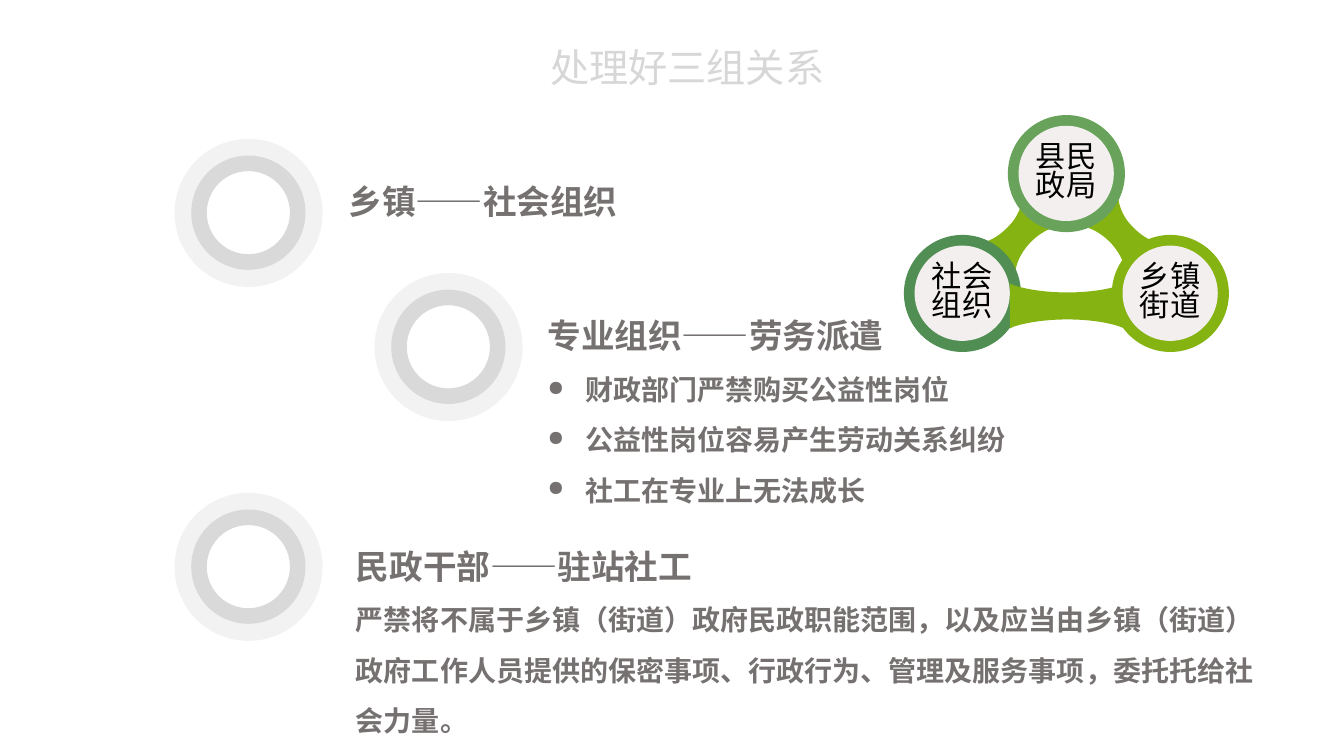
from dataclasses import dataclass
from lxml import etree
from pptx import Presentation
from pptx.dml.color import RGBColor
from pptx.enum.shapes import MSO_SHAPE
from pptx.enum.text import MSO_ANCHOR, PP_ALIGN
from pptx.oxml.ns import qn
from pptx.util import Cm, Pt

DONUT, OVAL, RECTANGLE = MSO_SHAPE.DONUT, MSO_SHAPE.OVAL, MSO_SHAPE.RECTANGLE
TOP, MIDDLE = MSO_ANCHOR.TOP, MSO_ANCHOR.MIDDLE
CENTER = PP_ALIGN.CENTER


@dataclass(frozen=True)
class Theme:
    veil: str = "FFFFFF"
    title: str = "3B3838"
    body: str = "767171"
    black: str = "000000"
    outer_ring: str = "F2F2F2"
    inner_ring: str = "D9D9D9"
    disc: str = "F3EFEF"
    lime: str = "85B311"
    green: str = "69A35B"
    dark_green: str = "508E53"
    cjk: str = "Noto Sans CJK SC"
    latin: str = "Calibri"
    title_size: float = 28
    heading_size: float = 24
    body_size: float = 20
    node_size: float = 21.6


theme = Theme()


def paint(shape, color):
    shape.shadow.inherit = False
    shape.fill.solid()
    shape.fill.fore_color.rgb = RGBColor.from_string(color)
    shape.line.fill.background()


def style(para, size, color, face, bold=False, spacing=1.5):
    para.line_spacing = spacing
    font = para.font
    font.size, font.bold, font.name = Pt(size), bold, face
    font.color.rgb = RGBColor.from_string(color)
    east_asian = etree.SubElement(font._element, qn("a:ea"))
    east_asian.set("typeface", theme.cjk)


deck = Presentation()
deck.slide_width, deck.slide_height = Cm(33.87), Cm(19.05)
page = deck.slides.add_slide(deck.slide_layouts[5])

veil = page.shapes.add_shape(RECTANGLE, Cm(0.08), 0, deck.slide_width, deck.slide_height)
paint(veil, theme.veil)
veil_color = veil._element.spPr.find(qn("a:solidFill"))[0]
etree.SubElement(veil_color, qn("a:alpha")).set("val", "80000")

title = page.shapes.title
title.left, title.top, title.width, title.height = Cm(7.73), Cm(0.38), Cm(19.18), Cm(2.06)
title.text_frame.text = "处理好三组关系"
title.text_frame.vertical_anchor = TOP
title_para = title.text_frame.paragraphs[0]
title_para.alignment = CENTER
style(title_para, theme.title_size, theme.title, theme.cjk)

relations = [
    ((4.4, 3.5), (8.54, 3.93, 21.62, 6.4), "乡镇——社会组织", [], False),
    ((9.44, 6.88), (13.55, 7.31, 16.69, 5.64), "专业组织——劳务派遣",
     ["财政部门严禁购买公益性岗位", "公益性岗位容易产生劳动关系纠纷", "社工在专业上无法成长"], True),
    ((4.4, 12.42), (8.72, 13.12, 23.32, 5.64), "民政干部——驻站社工",
     ["严禁将不属于乡镇（街道）政府民政职能范围，以及应当由乡镇（街道）政府工作人员提供的"
      "保密事项、行政行为、管理及服务事项，委托托给社会力量。"], False),
]
for (left, top), box_place, heading, details, bulleted in relations:
    group = page.shapes.add_group_shape()
    for inset, size, color in [(0, 3.73, theme.outer_ring), (0.42, 2.88, theme.inner_ring)]:
        ring = group.shapes.add_shape(DONUT, Cm(left + inset), Cm(top + inset), Cm(size), Cm(size))
        ring.adjustments[0] = 0.136
        paint(ring, color)
    box = group.shapes.add_textbox(*map(Cm, box_place))
    frame = box.text_frame
    frame.word_wrap = True
    frame.text = heading
    style(frame.paragraphs[0], theme.heading_size, theme.body, theme.cjk, True)
    for detail in details:
        para = frame.add_paragraph()
        para.text = detail
        if bulleted:
            properties = para._p.get_or_add_pPr()
            properties.set("marL", str(Cm(0.95)))
            properties.set("indent", str(-Cm(0.95)))
            etree.SubElement(properties, qn("a:buSzPct")).set("val", "75000")
            etree.SubElement(properties, qn("a:buChar")).set("char", "●")
        style(para, theme.body_size, theme.body, theme.cjk, True)

right_band = [
    (29.21, 6.1), (29.13, 6.1),
    (28.96, 6.05, 28.73, 5.92, 28.52, 5.69), (28.32, 5.49, 28.22, 5.23, 28.19, 5.05),
    (28.19, 4.98), (27.33, 5.74), (27.41, 5.74),
    (27.58, 5.79, 27.81, 5.92, 28.02, 6.15), (28.22, 6.38, 28.32, 6.6, 28.35, 6.78),
    (28.35, 6.86),
]
mirror_sum = 53.95
left_band = [tuple(mirror_sum - value if index % 2 == 0 else value
                   for index, value in enumerate(step)) for step in right_band]
bottom_band = [
    (28.35, 8.28), (28.22, 8.23),
    (27.94, 8.13, 27.46, 8.05, 26.9, 8.05), (26.34, 8.05, 25.86, 8.13, 25.55, 8.23),
    (25.45, 8.28), (25.45, 7.14), (25.55, 7.19),
    (25.86, 7.29, 26.34, 7.37, 26.9, 7.37), (27.46, 7.37, 27.94, 7.29, 28.22, 7.19),
    (28.35, 7.14),
]
nodes = [
    ([right_band, left_band], "社会组织", 22.78, 5.92, theme.dark_green),
    ([bottom_band], "县民政局", 25.4, 2.9, theme.green),
    ([], "乡镇街道", 28.02, 5.92, theme.lime),
]
for bands, label, left, top, color in nodes:
    for band in bands:
        corners = [(Cm(step[index]), Cm(step[index + 1]))
                   for step in band for index in range(0, len(step), 2)]
        builder = page.shapes.build_freeform(*corners[0])
        builder.add_line_segments(corners[1:], close=True)
        link = builder.convert_to_shape()
        paint(link, theme.lime)
        lines = iter(list(link._element.iter(qn("a:lnTo"))))
        for step in band[1:]:
            line = next(lines)
            if len(step) == 6:
                curve = etree.Element(qn("a:cubicBezTo"))
                line.addprevious(curve)
                for control in (line, next(lines), next(lines)):
                    curve.append(control[0])
                    control.getparent().remove(control)

    group = page.shapes.add_group_shape()
    rim = group.shapes.add_shape(OVAL, Cm(left), Cm(top), Cm(2.95), Cm(2.95))
    paint(rim, color)
    disc = group.shapes.add_shape(OVAL, Cm(left + 0.27), Cm(top + 0.27), Cm(2.4), Cm(2.4))
    paint(disc, theme.disc)
    frame = disc.text_frame
    frame.margin_left = frame.margin_right = frame.margin_top = frame.margin_bottom = 0
    frame.word_wrap = True
    frame.vertical_anchor = MIDDLE
    frame.text = label
    frame.paragraphs[0].alignment = CENTER
    style(frame.paragraphs[0], theme.node_size, theme.black, theme.latin, spacing=0.8)

deck.save("out.pptx")
